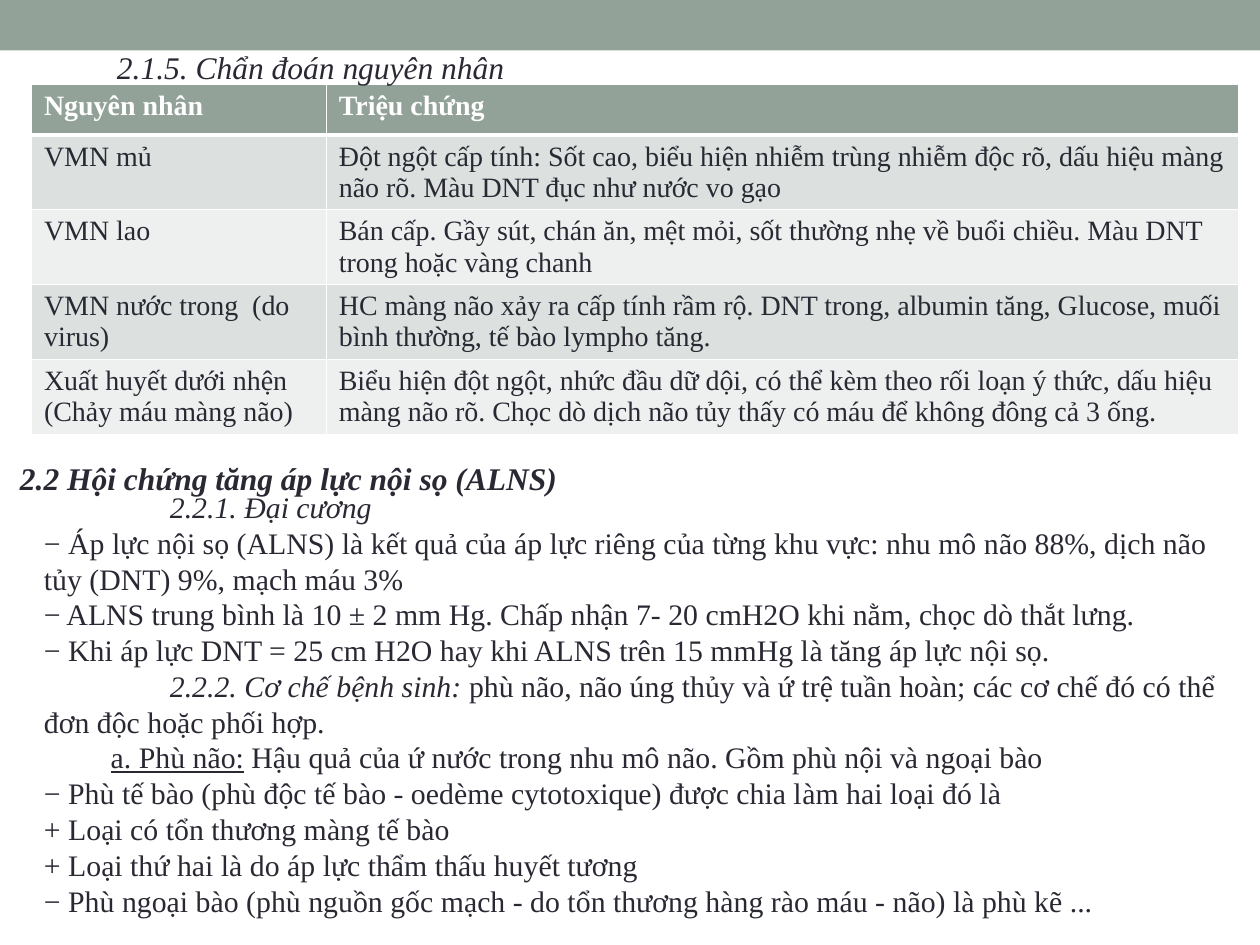
import pptx
import pptx.dml.color
import pptx.enum.shapes
import pptx.enum.text
import pptx.oxml
import pptx.oxml.ns
import pptx.util

Inches, Pt = pptx.util.Inches, pptx.util.Pt
RGBColor = pptx.dml.color.RGBColor

SAGE = RGBColor(0x93, 0xA2, 0x99)
BAND_DARK = RGBColor(0xDC, 0xE0, 0xDE)
BAND_LIGHT = RGBColor(0xEE, 0xF0, 0xEF)
INK = RGBColor(0x29, 0x29, 0x34)
WHITE = RGBColor(0xFF, 0xFF, 0xFF)
FONT = "Times New Roman"

CAUSES = [
    ("Nguyên nhân", "Triệu chứng"),
    ("VMN mủ",
     "Đột ngột cấp tính: Sốt cao, biểu hiện nhiễm trùng nhiễm độc rõ, "
     "dấu hiệu màng não rõ. Màu DNT đục như nước vo gạo"),
    ("VMN lao",
     "Bán cấp. Gầy sút, chán ăn, mệt mỏi, sốt thường nhẹ về buổi chiều. "
     "Màu DNT trong hoặc vàng chanh"),
    ("VMN nước trong  (do virus)",
     "HC màng não xảy ra cấp tính rầm rộ. DNT trong, albumin tăng, Glucose, "
     "muối bình thường, tế bào lympho tăng."),
    ("Xuất huyết dưới nhện (Chảy máu màng não)",
     "Biểu hiện đột ngột, nhức đầu dữ dội, có thể kèm theo rối loạn ý thức, "
     "dấu hiệu màng não rõ. Chọc dò dịch não tủy thấy có máu để không đông cả 3 ống."),
]
COL_WIDTHS = (2.34, 7.24)
HEADER_HEIGHT, ROW_HEIGHT = 0.4, 0.41

# The table's text is encoded with separate tone marks after each vowel
VOWELS = "aăâeêioôơuưy"
TONES = {
    0x300: "àằầèềìòồờùừỳ",
    0x301: "áắấéếíóốớúứý",
    0x303: "ãẵẫẽễĩõỗỡũữỹ",
    0x309: "ảẳẩẻểỉỏổởủửỷ",
    0x323: "ạặậẹệịọộợụựỵ",
}
SPLIT_TONES = str.maketrans({letter: vowel + chr(mark)
                             for mark, letters in TONES.items()
                             for letter, vowel in zip(letters, VOWELS)})

ITALIC = {"italic": True}
BOLD_ITALIC = {"bold": True, "italic": True}
UNDERLINE = {"underline": True}

# Each paragraph: first-line indent in inches, then its runs with their formats
HEADINGS = [
    ((0.83, 0.33, 3.38, 0.71), [(0, [("2.1.5. Chẩn đoán nguyên nhân", ITALIC)])]),
    ((0.06, 3.59, 4.52, 0.4),
     [(0, [("2.2 Hội chứng tăng áp lực nội sọ (ALNS)", BOLD_ITALIC)])]),
]
BODY_BOX = (0.25, 3.83, 9.58, 4.11)
BODY = [
    (1, [("2.2.1. Ðại cương", ITALIC)]),
    (0, [("− Áp lực nội sọ (ALNS) là kết quả của áp lực riêng của từng khu vực: "
          "nhu mô não 88%, dịch não tủy (DNT) 9%, mạch máu 3%", {})]),
    (0, [("− ALNS trung bình là 10 ± 2 mm Hg. Chấp nhận 7- 20 cmH2O khi nằm, "
          "chọc dò thắt lưng.", {})]),
    (0, [("− Khi áp lực DNT = 25 cm H2O hay khi ALNS trên 15 mmHg là tăng áp lực nội sọ.", {})]),
    (1, [("2.2.2. Cơ chế bệnh sinh: ", ITALIC),
         ("phù não, não úng thủy và ứ trệ tuần hoàn; các cơ chế đó có thể "
          "đơn độc hoặc phối hợp.", {})]),
    (0.53, [("a. Phù não:", UNDERLINE),
            (" Hậu quả của ứ nước trong nhu mô não. Gồm phù nội và ngoại bào", {})]),
    (0, [("− Phù tế bào (phù độc tế bào - oedème cytotoxique) được chia làm hai loại đó là", {})]),
    (0, [("+ Loại có tổn thương màng tế bào", {})]),
    (0, [("+ Loại thứ hai là do áp lực thẩm thấu huyết tương", {})]),
    (0, [("− Phù ngoại bào (phù nguồn gốc mạch - do tổn thương hàng rào máu - não) "
          "là phù kẽ ...", {})]),
]


def add_run(p, text, size, color=INK, **formats):
    r = p.add_run()
    r.text = text
    r.font.color.rgb = color
    for name, value in {"name": FONT, "size": Pt(size), **formats}.items():
        setattr(r.font, name, value)


def add_text(slide, box, paragraphs, size, wrap=False, line_spacing=None):
    tf = slide.shapes.add_textbox(*map(Inches, box)).text_frame
    tf.word_wrap = wrap
    tf.auto_size = pptx.enum.text.MSO_AUTO_SIZE.SHAPE_TO_FIT_TEXT
    for i, (indent, runs) in enumerate(paragraphs):
        p = tf.add_paragraph() if i else tf.paragraphs[0]
        p.line_spacing = line_spacing
        if indent:
            p._p.get_or_add_pPr().set("indent", str(Inches(indent)))
        for text, formats in runs:
            add_run(p, text, size, **formats)


def set_borders(cell, widths):
    """Draw white cell borders; widths maps each side's tag to points."""
    tcPr = cell._tc.get_or_add_tcPr()
    for i, (tag, width) in enumerate(widths.items()):
        tcPr.insert(i, pptx.oxml.parse_xml(
            f'<a:{tag} {pptx.oxml.ns.nsdecls("a")} w="{Pt(width)}">'
            f'<a:solidFill><a:srgbClr val="{WHITE}"/></a:solidFill></a:{tag}>'))


def add_causes_table(slide):
    frame = slide.shapes.add_table(
        len(CAUSES), len(COL_WIDTHS), *map(Inches, (0.25, 0.67, 9.58, 2.94)))
    table = frame.table
    for column, width in zip(table.columns, COL_WIDTHS):
        column.width = Inches(width)
    for i, texts in enumerate(CAUSES):
        header = i == 0
        table.rows[i].height = Inches(HEADER_HEIGHT if header else ROW_HEIGHT)
        fill = SAGE if header else (BAND_LIGHT, BAND_DARK)[i % 2]
        for j, text in enumerate(texts):
            cell = table.cell(i, j)
            cell.fill.solid()
            cell.fill.fore_color.rgb = fill
            add_run(cell.text_frame.paragraphs[0], text.translate(SPLIT_TONES), 16,
                    WHITE if header else INK, bold=header)
            set_borders(cell, {"lnL": 1, "lnR": 1, "lnT": 3 if i == 1 else 1,
                               "lnB": 3 if header else 1})
    frame.height = Inches(2.94)


def main():
    prs = pptx.Presentation()
    prs.slide_width, prs.slide_height = Inches(10), Inches(7.5)
    s = prs.slides.add_slide(prs.slide_layouts[6])

    band = s.shapes.add_shape(pptx.enum.shapes.MSO_SHAPE.RECTANGLE,
                              0, 0, prs.slide_width, Inches(0.4))
    band.shadow.inherit = False
    band.fill.solid()
    band.fill.fore_color.rgb = SAGE
    band.line.fill.background()

    add_causes_table(s)
    for box, paragraphs in HEADINGS:
        add_text(s, box, paragraphs, 18)
    add_text(s, BODY_BOX, BODY, 17, wrap=True, line_spacing=Pt(20.45))

    prs.save("out.pptx")


if __name__ == "__main__":
    main()
